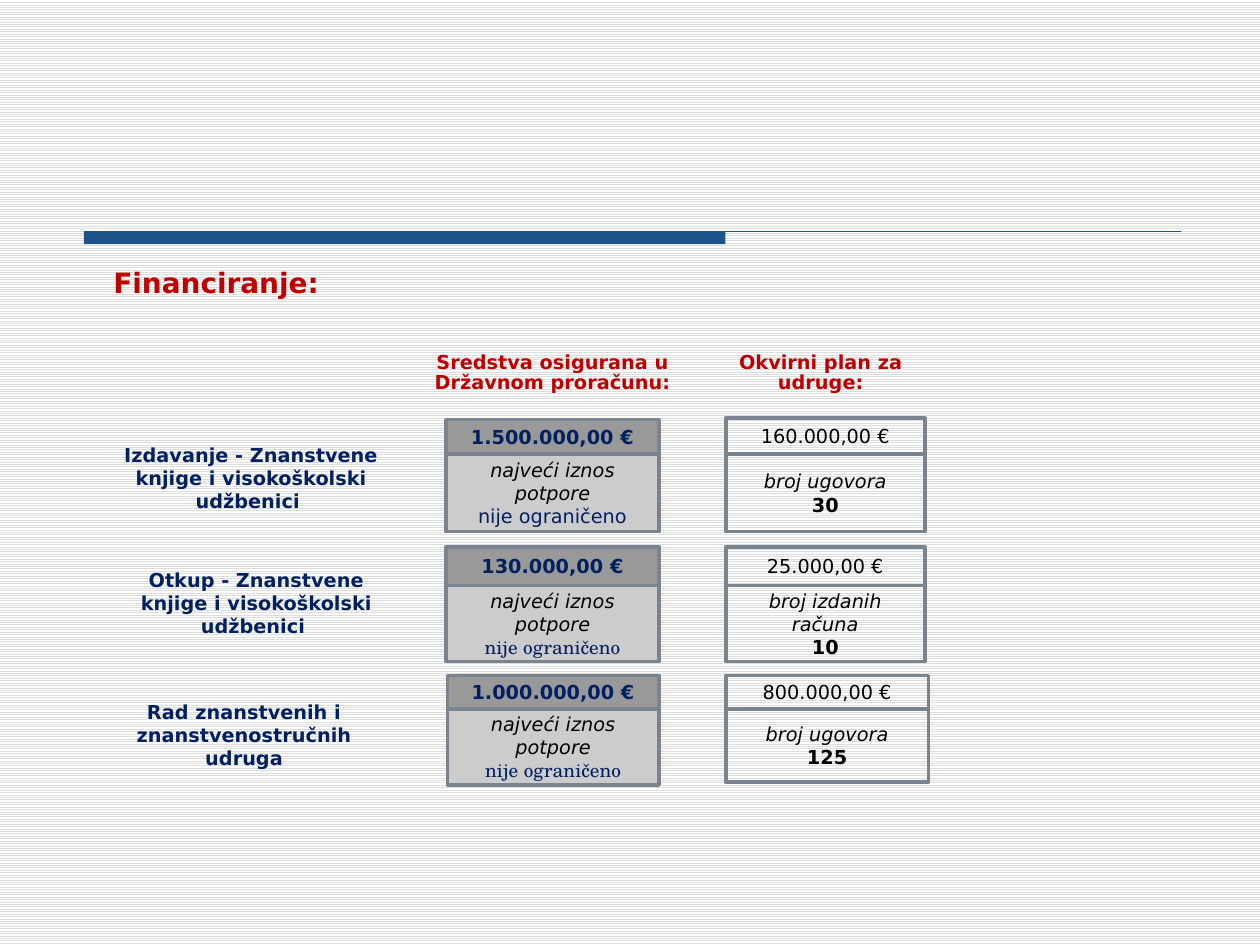
from collections import namedtuple
from dataclasses import dataclass

from lxml.etree import SubElement
from pptx import Presentation
from pptx.dml.color import RGBColor
from pptx.enum.dml import MSO_PATTERN
from pptx.enum.shapes import MSO_CONNECTOR, MSO_SHAPE
from pptx.enum.text import MSO_ANCHOR, PP_ALIGN
from pptx.oxml.ns import qn
from pptx.util import Pt

Box = namedtuple("Box", "left top width height")
Row = namedtuple("Row", "label label_box fund_box plan_box split fund plan limit_font caption count")


@dataclass(frozen=True)
class Theme:
    """Colours, fonts and sizes of the slide."""
    blue: str = "1D538B"
    navy: str = "002060"
    red: str = "C00000"
    black: str = "000000"
    white: str = "FFFFFF"
    stripe: str = "DDDDDD"
    border: str = "79848F"
    dark_grey: str = "999999"
    light_grey: str = "CCCCCC"
    sans: str = "DejaVu Sans"
    serif: str = "TeX Gyre Schola"
    title_size: float = 16
    body_size: float = 11
    border_width: float = 2
    rule_width: float = 0.75


THEME = Theme()

ROWS = [
    Row("Izdavanje - Znanstvene knjige i visokoškolski udžbenici ",
        Box(59, 249, 169, 48), Box(254.9, 239.8, 121.7, 64.1), Box(414.7, 239, 113.8, 64.9),
        259.4, "1.500.000,00 €", "160.000,00 €", THEME.sans, "broj ugovora", "30"),
    Row("Otkup - Znanstvene knjige i visokoškolski udžbenici ",
        Box(62, 320.5, 169, 48), Box(254.9, 312.5, 121.7, 65.5), Box(414.7, 312.5, 113.8, 65.5),
        334.6, "130.000,00 €", "25.000,00 €", THEME.serif, "broj izdanih računa", "10"),
    Row("Rad znanstvenih i znanstvenostručnih udruga",
        Box(55, 396, 169, 48), Box(255.6, 386, 121, 62.6), Box(414.7, 386, 115.9, 61),
        405.2, "1.000.000,00 €", "800.000,00 €", THEME.serif, "broj ugovora", "125"),
]


def color(value):
    """Turn a hex string into a colour."""
    return RGBColor.from_string(value)


def write(para, text, size=THEME.body_size, font=THEME.sans, tint=THEME.black,
          bold=False, italic=False, align=PP_ALIGN.CENTER, spacing=None):
    """Write formatted text into a paragraph."""
    para.alignment = align
    para.line_spacing = spacing
    span = para.add_run()
    span.text = text
    span.font.size = Pt(size)
    span.font.name = font
    span.font.bold = bold
    span.font.italic = italic
    span.font.color.rgb = color(tint)


def add_text(page, box, text, inset=None, **style):
    """Add a wrapping text box, centred vertically in its box."""
    frame = page.shapes.add_textbox(*map(Pt, box)).text_frame
    frame.word_wrap = True
    frame.vertical_anchor = MSO_ANCHOR.MIDDLE
    if inset is not None:
        frame.margin_left = frame.margin_right = Pt(inset)
        frame.margin_top = frame.margin_bottom = Pt(inset)
    write(frame.paragraphs[0], text, **style)


def add_cell(page, box, fill, lines):
    """Add a bordered rectangle with one paragraph for each line."""
    cell = page.shapes.add_shape(MSO_SHAPE.RECTANGLE, *map(Pt, box))
    cell.shadow.inherit = False
    if fill:
        cell.fill.solid()
        cell.fill.fore_color.rgb = color(fill)
    else:
        cell.fill.background()
    cell.line.color.rgb = color(THEME.border)
    cell.line.width = Pt(THEME.border_width)
    frame = cell.text_frame
    frame.word_wrap = True
    frame.vertical_anchor = MSO_ANCHOR.MIDDLE
    for index, (text, style) in enumerate(lines):
        para = frame.add_paragraph() if index else frame.paragraphs[0]
        write(para, text, **style)


def add_card(page, box, split, fills, amount, details):
    """Stack an amount cell on a details cell, divided at split."""
    bottom = box.top + box.height
    add_cell(page, box._replace(height=split - box.top), fills[0], [amount])
    add_cell(page, box._replace(top=split, height=bottom - split), fills[1], details)


def add_row(page, row):
    """Add a programme label with its fund and plan cards."""
    strong = {"tint": THEME.navy, "bold": True}
    add_text(page, row.label_box, row.label, **strong)
    add_card(page, row.fund_box, row.split, (THEME.dark_grey, THEME.light_grey),
             (row.fund, strong),
             [("najveći iznos potpore", {"italic": True}),
              ("nije ograničeno", {"tint": THEME.navy, "font": row.limit_font})])
    add_card(page, row.plan_box, row.split, (None, None), (row.plan, {}),
             [(row.caption, {"italic": True}), (row.count, {"bold": True})])


def add_divider(page, box, bar_width):
    """Add a thin rule across the box and a thick bar at its left."""
    bar = page.shapes.add_shape(MSO_SHAPE.RECTANGLE, *map(Pt, box._replace(width=bar_width)))
    bar.shadow.inherit = False
    bar.fill.solid()
    bar.fill.fore_color.rgb = color(THEME.blue)
    bar.line.fill.background()
    rule = page.shapes.add_connector(MSO_CONNECTOR.STRAIGHT, Pt(box.left), Pt(box.top),
                                     Pt(box.left + box.width), Pt(box.top))
    rule.line.color.rgb = color(THEME.blue)
    rule.line.width = Pt(THEME.rule_width)
    SubElement(rule._element.spPr, qn("a:effectLst"))


def add_headings(page):
    """Add the title and the two column headings."""
    style = {"inset": 4.3, "tint": THEME.red, "bold": True, "spacing": 0.9}
    add_text(page, Box(60.5, 144, 470, 37.4), "Financiranje:",
             size=THEME.title_size, align=PP_ALIGN.LEFT, **style)
    add_text(page, Box(240.5, 196.6, 150.5, 33.4),
             "Sredstva osigurana u Državnom proračunu:", **style)
    add_text(page, Box(411, 196.6, 116, 33.4), "Okvirni plan za udruge:", **style)


def paint_background(page):
    """Fill the background with thin horizontal stripes."""
    fill = page.background.fill
    fill.patterned()
    fill.pattern = MSO_PATTERN.LIGHT_HORIZONTAL
    fill.fore_color.rgb = color(THEME.stripe)
    fill.back_color.rgb = color(THEME.white)


def main():
    """Build and save the deck."""
    deck = Presentation()
    deck.slide_width, deck.slide_height = Pt(720), Pt(540)
    page = deck.slides.add_slide(deck.slide_layouts[6])
    paint_background(page)
    add_divider(page, Box(48, 132.3, 626.6, 7.2), 366.5)
    add_headings(page)
    for row in ROWS:
        add_row(page, row)
    deck.save("out.pptx")


if __name__ == "__main__":
    main()
